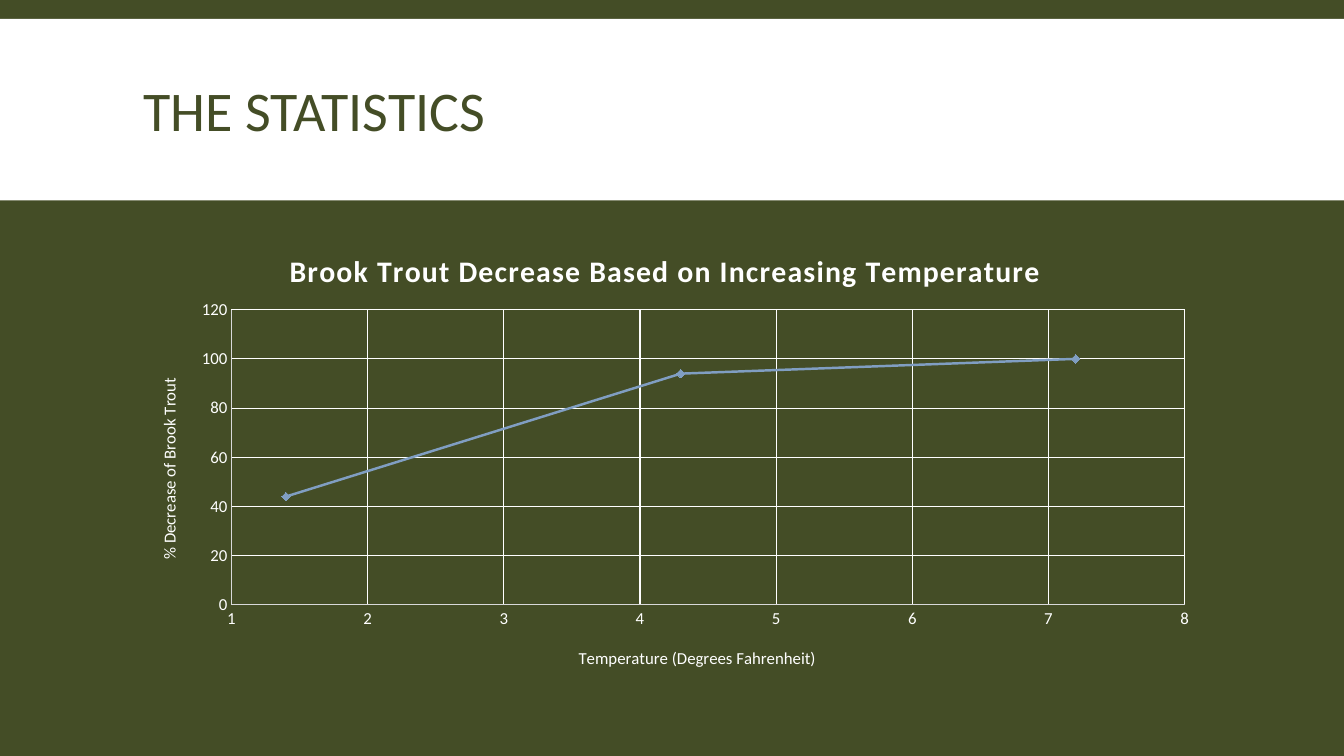
from lxml.etree import SubElement
from pptx import Presentation
from pptx.chart.data import XyChartData
from pptx.dml.color import RGBColor
from pptx.enum.chart import XL_CHART_TYPE, XL_MARKER_STYLE, XL_TICK_LABEL_POSITION, XL_TICK_MARK
from pptx.enum.shapes import MSO_SHAPE
from pptx.enum.text import MSO_ANCHOR
from pptx.oxml.ns import qn
from pptx.util import Pt

COLORS = {"olive": "444D26", "white": "FFFFFF", "axis": "D9D9D9", "blue": "809EC2"}
PX = 9525


class StatisticsSlide:
    """Holds the style and the current slide, and draws each kind of element."""

    font_name = "Calibri"

    def __init__(self, deck):
        self.slide = deck.slides.add_slide(deck.slide_layouts[6])
        self.paint(self.slide.background.fill, "olive")

    def paint(self, fill, color):
        fill.solid()
        fill.fore_color.rgb = RGBColor.from_string(COLORS[color])

    def stroke(self, line, color, width):
        self.paint(line.fill, color)
        line.width = Pt(width)

    def style_font(self, font, size, color, bold=False):
        font.name, font.size, font.bold = self.font_name, Pt(size), bold
        self.paint(font.fill, color)

    def box(self, *place):
        return [length * PX for length in place]

    def band(self, place, color):
        band = self.slide.shapes.add_shape(MSO_SHAPE.RECTANGLE, *self.box(*place))
        band.shadow.inherit = False
        self.paint(band.fill, color)
        band.line.fill.background()

    def heading(self, place, wording):
        frame = self.slide.shapes.add_textbox(*self.box(*place)).text_frame
        frame.word_wrap = True
        frame.vertical_anchor = MSO_ANCHOR.MIDDLE
        frame.text = wording
        frame.paragraphs[0].line_spacing = 0.85
        self.style_font(frame.paragraphs[0].runs[0].font, 40, "olive")

    def arrange(self, parent, index, **fractions):
        for previous in parent.findall(qn("c:layout")):
            parent.remove(previous)
        layout = parent.makeelement(qn("c:layout"))
        parent.insert(index, layout)
        manual = SubElement(layout, qn("c:manualLayout"))
        if "w" in fractions:
            SubElement(manual, qn("c:layoutTarget"), val="inner")
        for side in "xy":
            SubElement(manual, qn(f"c:{side}Mode"), val="edge")
        for key, fraction in fractions.items():
            SubElement(manual, qn(f"c:{key}"), val=str(fraction))

    def caption(self, title, wording, size, x, y, bold=False):
        title.text_frame.text = wording
        run = title.text_frame.paragraphs[0].runs[0]
        self.style_font(run.font, size, "white", bold)
        self.arrange(title._element, 1, x=x, y=y)
        return run

    def axis(self, axis, low, high, step, wording, x, y):
        axis.minimum_scale, axis.maximum_scale, axis.major_unit = low, high, step
        axis.major_tick_mark = axis.minor_tick_mark = XL_TICK_MARK.NONE
        axis.tick_label_position = XL_TICK_LABEL_POSITION.NEXT_TO_AXIS
        axis.tick_labels.number_format = "General"
        axis.tick_labels.number_format_is_linked = False
        self.style_font(axis.tick_labels.font, 12, "white")
        self.stroke(axis.format.line, "axis", 0.75)
        axis.has_major_gridlines = True
        self.stroke(axis.major_gridlines.format.line, "white", 0.75)
        self.caption(axis.axis_title, wording, 12, x, y)

    def scatter(self, place, heading, points):
        trout_data = XyChartData()
        decrease = trout_data.add_series("Series 1")
        for temperature, percent in points:
            decrease.add_data_point(temperature, percent)
        chart = self.slide.shapes.add_chart(
            XL_CHART_TYPE.XY_SCATTER_SMOOTH, *self.box(*place), trout_data).chart
        self.style_font(chart.font, 10, "white")
        chart.has_legend = False
        chart.has_title = True
        chart.chart_title.include_in_layout = False
        run = self.caption(chart.chart_title, heading, 21.3, 0.14, 0.05, bold=True)
        run.font._element.set("spc", "100")
        plot = chart.plots[0]
        plot.vary_by_categories = False
        self.arrange(plot._element.getparent(), 0, x=0.091, y=0.19, w=0.884, h=0.636)
        curve = plot.series[0]
        self.stroke(curve.format.line, "blue", 1.75)
        curve.marker.style = XL_MARKER_STYLE.DIAMOND
        curve.marker.size = 6
        self.paint(curve.marker.format.fill, "blue")
        self.stroke(curve.marker.format.line, "blue", 0.75)
        self.axis(chart.category_axis, 1, 8, 1, "Temperature (Degrees Fahrenheit)", 0.41, 0.91)
        self.axis(chart.value_axis, 0, 120, 20, "% Decrease of Brook Trout", 0.02, 0.33)
        direction = chart.value_axis.axis_title.text_frame._txBody.bodyPr
        direction.set("rot", "-5400000")
        direction.set("vert", "horz")


def main():
    deck = Presentation()
    deck.slide_width, deck.slide_height = 1280 * PX, 720 * PX
    statistics = StatisticsSlide(deck)
    statistics.band((0, 18, 1280, 173), "white")
    statistics.heading((127, 30, 1027, 158), "THE STATISTICS")
    statistics.scatter((127, 211, 1027, 442),
                       "Brook Trout Decrease Based on Increasing Temperature",
                       [(1.4, 44), (4.3, 94), (7.2, 100)])
    deck.save("out.pptx")


if __name__ == "__main__":
    main()
